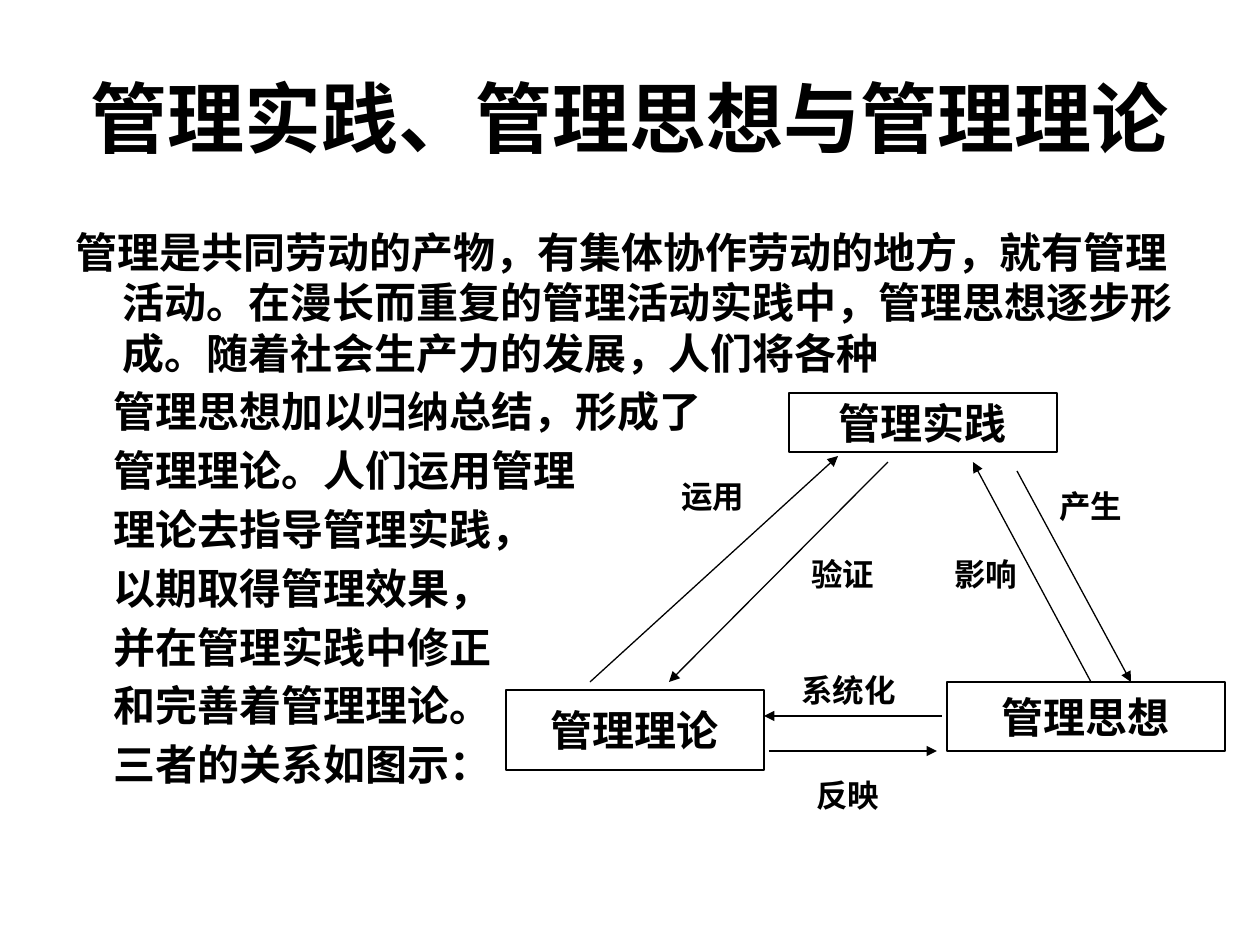
from dataclasses import dataclass

from lxml.etree import SubElement
from pptx import Presentation
from pptx.dml.color import RGBColor
from pptx.enum.shapes import MSO_CONNECTOR, MSO_SHAPE
from pptx.enum.text import MSO_ANCHOR, MSO_AUTO_SIZE, PP_ALIGN
from pptx.oxml.ns import qn
from pptx.util import Emu, Pt


@dataclass(frozen=True)
class Theme:
    ink: RGBColor = RGBColor(0, 0, 0)
    paper: RGBColor = RGBColor(255, 255, 255)
    text_font: str = "Arial"
    diagram_font: str = "Lato"
    title_size: int = 44
    body_size: int = 24
    node_size: int = 24
    label_size: int = 18
    line_width: float = 0.75


THEME = Theme()
PX_PER_INCH = 126

TITLE = "管理实践、管理思想与管理理论"
OPENING = (
    "管理是共同劳动的产物，有集体协作劳动的地方，就有管理活动。"
    "在漫长而重复的管理活动实践中，管理思想逐步形成。"
    "随着社会生产力的发展，人们将各种"
)
CONTINUATION = [
    "管理思想加以归纳总结，形成了",
    "管理理论。人们运用管理",
    "理论去指导管理实践，",
    "以期取得管理效果，",
    "并在管理实践中修正",
    "和完善着管理理论。",
    "三者的关系如图示：",
]
NODES = [
    ("管理实践", (283, 0, 268, 59)),
    ("管理理论", (0, 297, 258, 80)),
    ("管理思想", (441, 289, 278, 69)),
]
ARROWS = [
    ((84, 289), (332, 63)),
    ((382, 69), (163, 289)),
    ((585, 289), (467, 69)),
    ((511, 78), (625, 289)),
    ((436, 323), (258, 323)),
    ((263, 358), (431, 358)),
]
LABELS = [
    ("运用", (163, 78, 100, 50)),
    ("验证", (293, 156, 89, 50)),
    ("系统化", (283, 272, 129, 50)),
    ("反映", (298, 377, 100, 50)),
    ("产生", (541, 88, 110, 50)),
    ("影响", (436, 156, 89, 50)),
]


def px(length):
    return Emu(round(length * 914400 / PX_PER_INCH))


def offset(origin, box):
    left, top, width, height = box
    return [px(value) for value in (origin[0] + left, origin[1] + top, width, height)]


def move(shape, box):
    shape.left, shape.top, shape.width, shape.height = offset((0, 0), box)


def write(para, text, *, size, font, align=PP_ALIGN.LEFT, before=0):
    para.alignment = align
    para.space_before = Pt(before)
    span = para.add_run()
    span.text = text
    span.font.name = font
    span.font.size = Pt(size)
    span.font.bold = True
    span.font.color.rgb = THEME.ink


def indent(para, margin, first_line):
    properties = para._p.get_or_add_pPr()
    properties.set("marL", str(px(margin)))
    properties.set("indent", str(px(first_line)))
    SubElement(properties, qn("a:buNone"))


def fill_title(title, box):
    move(title, box)
    frame = title.text_frame
    frame.auto_size = MSO_AUTO_SIZE.NONE
    frame.vertical_anchor = MSO_ANCHOR.MIDDLE
    write(frame.paragraphs[0], TITLE, size=THEME.title_size,
          font=THEME.text_font, align=PP_ALIGN.CENTER)


def fill_body(body, box):
    move(body, box)
    frame = body.text_frame
    frame.auto_size = MSO_AUTO_SIZE.NONE
    style = {"size": THEME.body_size, "font": THEME.text_font}
    opening = frame.paragraphs[0]
    indent(opening, 47, -47)
    write(opening, OPENING, **style)
    for text in CONTINUATION:
        para = frame.add_paragraph()
        indent(para, 38, 0)
        write(para, text, before=THEME.body_size * 0.2, **style)


def add_node(page, origin, text, box):
    node = page.shapes.add_shape(MSO_SHAPE.RECTANGLE, *offset(origin, box))
    node.shadow.inherit = False
    node.fill.solid()
    node.fill.fore_color.rgb = THEME.paper
    node.line.color.rgb = THEME.ink
    node.line.width = Pt(THEME.line_width)
    frame = node.text_frame
    frame.word_wrap = False
    frame.vertical_anchor = MSO_ANCHOR.MIDDLE
    write(frame.paragraphs[0], text, size=THEME.node_size,
          font=THEME.diagram_font, align=PP_ALIGN.CENTER)


def add_arrow(page, origin, start, end):
    ends = [px(base + step) for point in (start, end) for base, step in zip(origin, point)]
    arrow = page.shapes.add_connector(MSO_CONNECTOR.STRAIGHT, *ends)
    arrow.line.color.rgb = THEME.ink
    arrow.line.width = Pt(THEME.line_width)
    SubElement(arrow.line._get_or_add_ln(), qn("a:tailEnd"), type="triangle")
    SubElement(arrow._element.spPr, qn("a:effectLst"))


def add_label(page, origin, text, box):
    frame = page.shapes.add_textbox(*offset(origin, box)).text_frame
    frame.word_wrap = True
    frame.auto_size = MSO_AUTO_SIZE.SHAPE_TO_FIT_TEXT
    write(frame.paragraphs[0], text, size=THEME.label_size, font=THEME.diagram_font)


def draw_diagram(page, origin):
    for text, box in NODES:
        add_node(page, origin, text, box)
    for start, end in ARROWS:
        add_arrow(page, origin, start, end)
    for text, box in LABELS:
        add_label(page, origin, text, box)


def main():
    deck = Presentation()
    deck.slide_width, deck.slide_height = px(1260), px(945)
    page = deck.slides.add_slide(deck.slide_layouts[1])
    page.background.fill.solid()
    page.background.fill.fore_color.rgb = THEME.paper
    fill_title(page.shapes.title, (63, 38, 1134, 158))
    fill_body(page.placeholders[1], (63, 220, 1134, 624))
    draw_diagram(page, (506, 393))
    deck.save("out.pptx")


if __name__ == "__main__":
    main()
